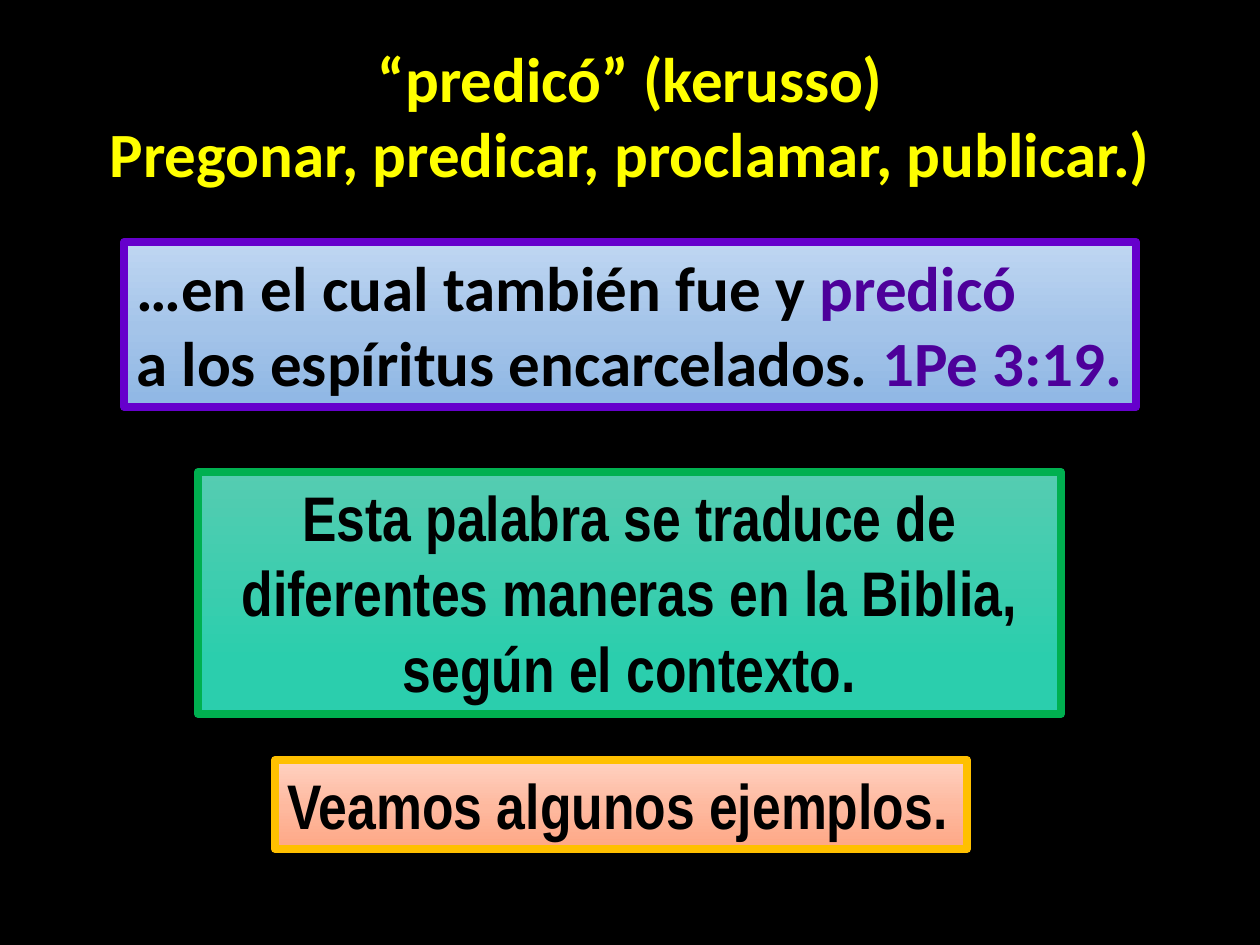
from lxml import etree
from pptx import Presentation
from pptx import util as u
from pptx.dml.color import RGBColor
from pptx.enum import shapes, text
from pptx.oxml.ns import qn

PX = u.Inches(1) / 126
LEFT, MID = text.PP_ALIGN.LEFT, text.PP_ALIGN.CENTER


def rgb(code):
    return RGBColor.from_string(code)


def sub(node, tag, **attrs):
    return etree.SubElement(node, qn(tag), attrs)


def paint(node, code):
    """Add a solid colour element and return it."""
    return sub(node, "a:srgbClr", val=code)


class Deck:
    """Holds the text style and the current slide."""
    size = u.Pt(36)
    edge = u.Pt(4.5)

    def __init__(self, wide, high, back):
        self.prs = Presentation()
        self.prs.slide_width = round(wide * PX)
        self.prs.slide_height = round(high * PX)
        self.slide = self.prs.slides.add_slide(self.prs.slide_layouts[5])
        fill = self.slide.background.fill
        fill.solid()
        fill.fore_color.rgb = rgb(back)

    def label(self, shape, lines, face, align, wrap=True):
        """Each line is a list of (words, colour, outline) runs."""
        frame = shape.text_frame
        frame.word_wrap = wrap
        frame.auto_size = text.MSO_AUTO_SIZE.SHAPE_TO_FIT_TEXT
        frame.vertical_anchor = text.MSO_ANCHOR.TOP
        for i, line in enumerate(lines):
            para = frame.add_paragraph() if i else frame.paragraphs[0]
            para.alignment = align
            for words, color, rim in line:
                run = para.add_run()
                run.text = words
                font = run.font
                font.name, font.size, font.bold = face, self.size, True
                font.color.rgb = rgb(color)
                # Thin outline around the letters
                ln = etree.Element(qn("a:ln"), w=str(u.Pt(0.75)))
                paint(sub(ln, "a:solidFill"), rim)
                run._r.rPr.insert(0, ln)

    def title(self, box, lines, face):
        shape = self.slide.shapes.title
        shape.left, shape.top, shape.width, shape.height = (
            round(n * PX) for n in box)
        self.label(shape, lines, face, MID)

    def panel(self, box, stops, edge, lines, face, align=LEFT,
              wrap=True, shade=False):
        shape = self.slide.shapes.add_shape(
            shapes.MSO_SHAPE.RECTANGLE, *(round(n * PX) for n in box))
        shape.shadow.inherit = False
        # Top-to-bottom gradient
        shape.fill.gradient()
        shape.fill.gradient_angle = 270
        props = shape._element.spPr
        bands = props.find(qn("a:gradFill")).find(qn("a:gsLst"))
        for old in list(bands):
            bands.remove(old)
        for pos, color in stops:
            paint(sub(bands, "a:gs", pos=str(pos * 1000)), color)
        # Border with round corners
        shape.line.color.rgb = rgb(edge)
        shape.line.width = self.edge
        sub(props.find(qn("a:ln")), "a:round")
        if shade:
            drop = sub(props.find(qn("a:effectLst")), "a:outerShdw",
                       blurRad=str(u.Pt(4.5)), dist=str(u.Pt(1.5)),
                       dir="5400000", rotWithShape="0")
            sub(paint(drop, "000000"), "a:alpha", val="48000")
        self.label(shape, lines, face, align, wrap)


def plain(words, color="000000"):
    return words, color, color


def accent(words):
    return words, "4D009A", "6600CC"


def main():
    deck = Deck(1260, 945, "000000")

    # Heading
    deck.title((77, 33, 1106, 165),
               [[plain("“predicó” (kerusso)", "FFFF00")],
                [plain("Pregonar, predicar, proclamar, publicar.)", "FFFF00")]],
               "Calibri")

    # Verse
    deck.panel((124, 242, 1012, 165),
               [(0, "BFD6F2"), (52, "A4C4E9"), (100, "8FB7E4")], "6600CC",
               [[plain("…en el cual también fue y "), accent("predicó")],
                [plain("a los espíritus encarcelados. "), accent("1Pe 3:19.")]],
               "Calibri")

    # Remark
    deck.panel((198, 472, 863, 242),
               [(0, "55CCB1"), (78, "2BCEAD")], "00B050",
               [[plain("Esta palabra se traduce de diferentes maneras "
                       "en la Biblia, según el contexto.")]],
               "Arial Narrow", MID, shade=True)

    # Lead-in to the examples
    deck.panel((275, 760, 692, 89),
               [(0, "FFD2C2"), (52, "FEB99F"), (100, "FEA785")], "FFC000",
               [[plain("Veamos algunos ejemplos.")]],
               "Arial Narrow", wrap=False)

    deck.prs.save("out.pptx")


if __name__ == "__main__":
    main()
